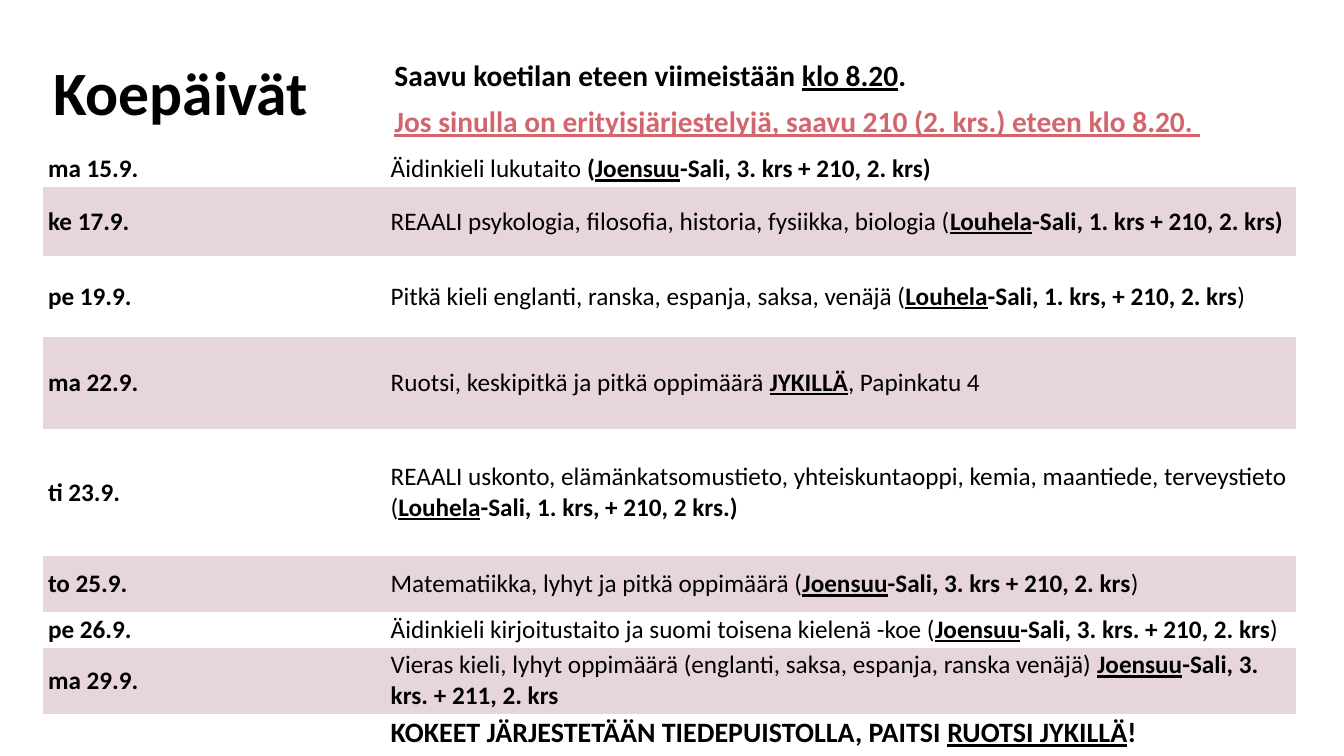
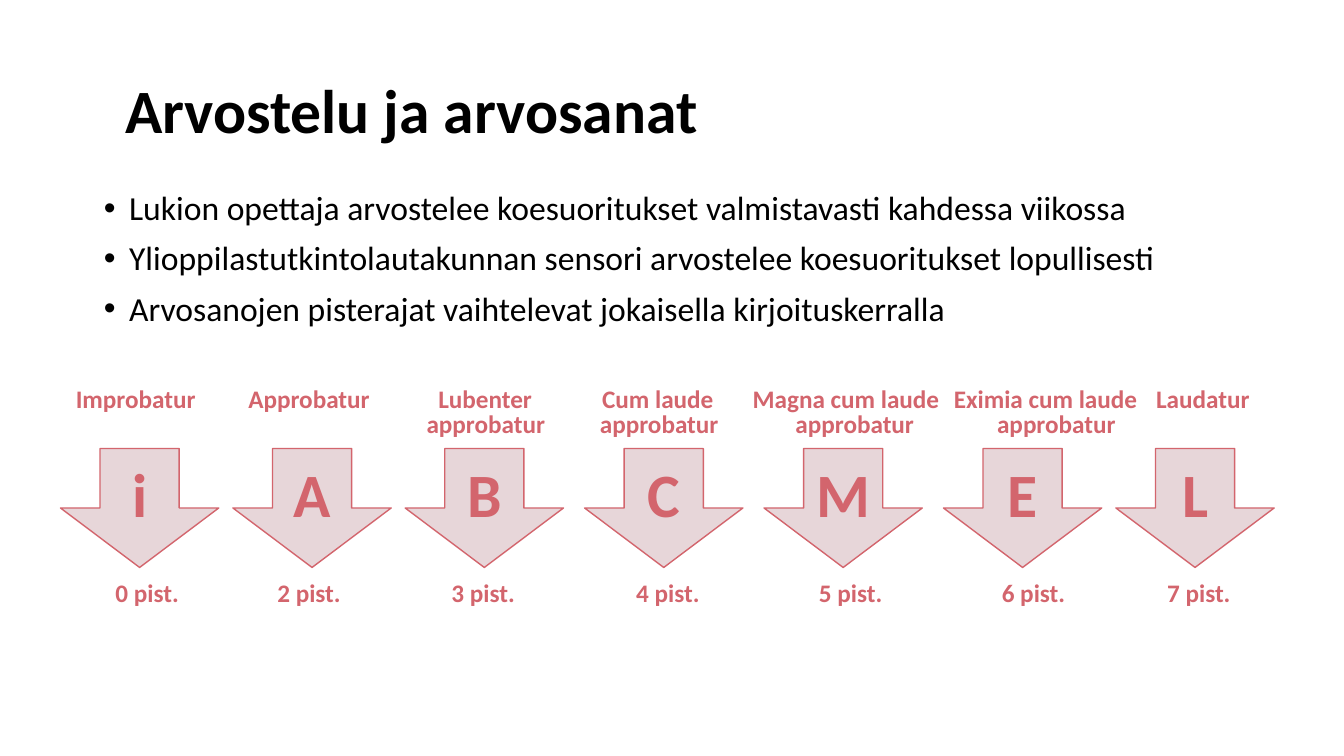
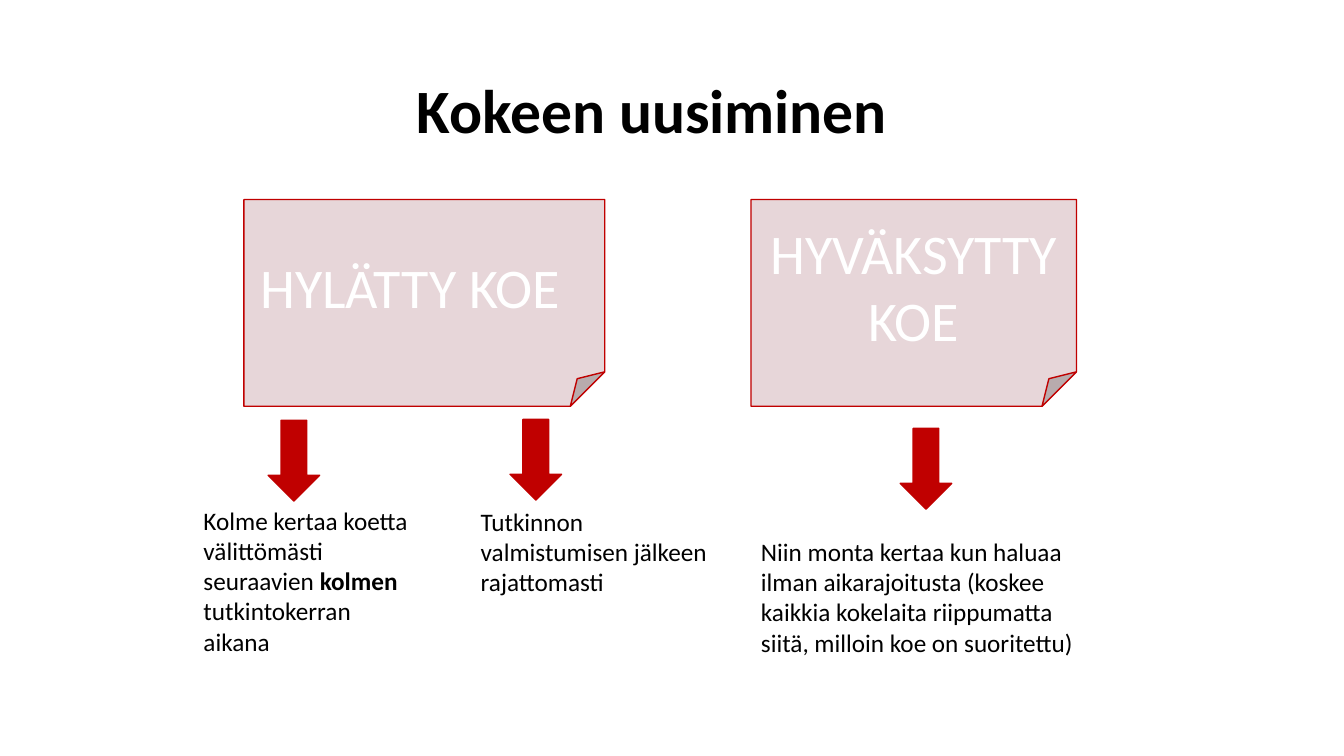
import dataclasses
import typing

import lxml.etree
import pptx
import pptx.dml.color
import pptx.enum.shapes
import pptx.enum.text
import pptx.oxml.ns
import pptx.util

SLIDE_WIDTH = pptx.util.Inches(13.33)
SLIDE_HEIGHT = pptx.util.Inches(7.5)
FONT = "Calibri"
COLORS = {
    "text": "000000",
    "rose": "D3656D",
    "pale": "E7D6D9",
    "red": "C00000",
    "white": "FFFFFF",
}
NO_GRID_STYLE = "{2D5ABB26-0587-4C30-8999-92F81FD0307C}"
ALIGN = pptx.enum.text.PP_ALIGN
ANCHOR = pptx.enum.text.MSO_ANCHOR
SHAPE = pptx.enum.shapes.MSO_SHAPE


class Box(typing.NamedTuple):
    left: float
    top: float
    width: float
    height: float


class Run(typing.NamedTuple):
    text: str
    bold: bool = False
    underline: bool = False
    color: str = "text"


Runs = typing.Sequence[Run]


@dataclasses.dataclass
class ExamDay:
    date: str
    height: float
    runs: Runs
    size: float = 18


@dataclasses.dataclass
class Label:
    text: str
    center: float


@dataclasses.dataclass
class Grade:
    letter: str
    left: float
    name: Label
    points: Label
    second_name: typing.Optional[Label] = None


@dataclasses.dataclass
class Card:
    text: str
    box: Box
    right_inset: float = 0.1


@dataclasses.dataclass
class Outcome:
    arrow_left: float
    arrow_top: float
    text_box: Box
    runs: Runs


def exam(start: str, hall: str, rest: str, end: str = "") -> list[Run]:
    runs = [Run(start), Run(hall, True, True), Run(rest, True)]
    return runs + [Run(end)] if end else runs


EXAM_DAYS = [
    ExamDay("ma 15.9.", 4.8, [
        Run("Äidinkieli lukutaito "), Run("(", True), Run("Joensuu", True, True),
        Run("-Sali, 3. krs + 210, 2. krs)", True)]),
    ExamDay("ke 17.9.", 9.1, exam(
        "REAALI psykologia, filosofia, historia, fysiikka, biologia (",
        "Louhela", "-Sali, 1. krs + 210, 2. krs)")),
    ExamDay("pe 19.9.", 10.7, exam(
        "Pitkä kieli englanti, ranska, espanja, saksa, venäjä (",
        "Louhela", "-Sali, 1. krs, + 210, 2. krs", ")")),
    ExamDay("ma 22.9.", 12.1, [
        Run("Ruotsi, keskipitkä ja pitkä oppimäärä "),
        Run("JYKILLÄ", True, True), Run(", Papinkatu 4")]),
    ExamDay("ti 23.9.", 16.9, exam(
        "REAALI uskonto, elämänkatsomustieto, yhteiskuntaoppi, kemia, maantiede, "
        "terveystieto (", "Louhela", "-Sali, 1. krs, + 210, 2 krs.)")),
    ExamDay("to 25.9.", 7.3, exam(
        "Matematiikka, lyhyt ja pitkä oppimäärä (",
        "Joensuu", "-Sali, 3. krs + 210, 2. krs", ")")),
    ExamDay("pe 26.9.", 4.8, exam(
        "Äidinkieli kirjoitustaito ja suomi toisena kielenä -koe (",
        "Joensuu", "-Sali, 3. krs. + 210, 2. krs", ")")),
    ExamDay("ma 29.9.", 8.7, exam(
        "Vieras kieli, lyhyt oppimäärä (englanti, saksa, espanja, ranska venäjä) ",
        "Joensuu", "-Sali, 3. krs. + 211, 2. krs")),
    ExamDay("", 5.1, [
        Run("KOKEET JÄRJESTETÄÄN TIEDEPUISTOLLA, PAITSI ", True),
        Run("RUOTSI JYKILLÄ", True, True), Run("!", True)], 20),
]

GRADES = [
    Grade("i", 4.5, Label("Improbatur", 10.1), Label("0 pist.", 10.95)),
    Grade("A", 17.33, Label("Approbatur", 23), Label("2 pist.", 23)),
    Grade("B", 30.15, Label("Lubenter", 36.1), Label("3 pist.", 35.95),
          Label("approbatur", 36.15)),
    Grade("C", 43.5, Label("Cum laude", 48.95), Label("4 pist.", 49.7),
          Label("approbatur", 49.05)),
    Grade("M", 56.85, Label("Magna cum laude", 62.95), Label("5 pist.", 63.3),
          Label("approbatur", 63.6)),
    Grade("E", 70.2, Label("Eximia cum laude", 77.8), Label("6 pist.", 76.9),
          Label("approbatur", 78.6)),
    Grade("L", 83.03, Label("Laudatur", 89.5), Label("7 pist.", 89.2)),
]

CARDS = [
    Card("HYLÄTTY KOE", Box(18.15, 26.4, 26.85, 27.35), 0.38),
    Card("HYVÄKSYTTY KOE", Box(55.88, 26.4, 24.22, 27.35)),
]

OUTCOMES = [
    Outcome(19.95, 55.6, Box(14.4, 66.13, 17.4, 21.6), [
        Run("Kolme kertaa koetta välittömästi seuraavien "),
        Run("kolmen", True), Run(" tutkintokerran aikana")]),
    Outcome(37.95, 55.47, Box(35.03, 66.27, 19.8, 13.47), [
        Run("Tutkinnon valmistumisen jälkeen rajattomasti")]),
    Outcome(66.98, 56.67, Box(55.88, 70.27, 25.35, 17.47), [
        Run("Niin monta kertaa kun haluaa ilman aikarajoitusta (koskee kaikkia "
            "kokelaita riippumatta siitä, milloin koe on suoritettu)")]),
]


def across(share: float) -> int:
    return round(SLIDE_WIDTH * share / 100)


def down(share: float) -> int:
    return round(SLIDE_HEIGHT * share / 100)


def lengths(box: Box) -> tuple[int, int, int, int]:
    return across(box.left), down(box.top), across(box.width), down(box.height)


def rgb(name: str) -> pptx.dml.color.RGBColor:
    return pptx.dml.color.RGBColor.from_string(COLORS[name])


def add_runs(paragraph, runs: Runs, size: float) -> None:
    for item in runs:
        run = paragraph.add_run()
        run.text = item.text
        run.font.name = FONT
        run.font.size = pptx.util.Pt(size)
        run.font.bold = item.bold
        run.font.underline = item.underline
        run.font.color.rgb = rgb(item.color)


def place(placeholder, box: Box):
    (placeholder.left, placeholder.top,
     placeholder.width, placeholder.height) = lengths(box)
    frame = placeholder.text_frame
    frame.auto_size = pptx.enum.text.MSO_AUTO_SIZE.NONE
    frame.word_wrap = True
    return frame


def set_title(slide, text: str, box: Box) -> None:
    frame = place(slide.shapes.title, box)
    frame.vertical_anchor = ANCHOR.MIDDLE
    paragraph = frame.paragraphs[0]
    paragraph.alignment = ALIGN.LEFT
    paragraph.line_spacing = 0.9
    add_runs(paragraph, [Run(text, True)], 44)


def set_body(slide, lines: typing.Sequence[Runs], box: Box, size: float,
             bullet: str = "") -> None:
    frame = place(slide.placeholders[1], box)
    frame.vertical_anchor = ANCHOR.TOP
    for index, runs in enumerate(lines):
        paragraph = frame.add_paragraph() if index else frame.paragraphs[0]
        properties = paragraph._p.get_or_add_pPr()
        indent = pptx.util.Inches(0.25) if bullet else 0
        properties.set("marL", str(indent))
        properties.set("indent", str(-indent))
        tag = "a:buChar" if bullet else "a:buNone"
        mark = lxml.etree.SubElement(properties, pptx.oxml.ns.qn(tag))
        if bullet:
            mark.set("char", bullet)
        paragraph.alignment = ALIGN.LEFT
        paragraph.line_spacing = 0.9
        paragraph.space_before = pptx.util.Pt(10 if index else 0)
        add_runs(paragraph, runs, size)


def add_text(slide, box: Box, runs: Runs, alignment=ALIGN.LEFT) -> None:
    frame = slide.shapes.add_textbox(*lengths(box)).text_frame
    frame.word_wrap = True
    frame.paragraphs[0].alignment = alignment
    add_runs(frame.paragraphs[0], runs, 18)


def add_shape(slide, kind, box: Box, fill: str, line: str):
    shape = slide.shapes.add_shape(kind, *lengths(box))
    shape.shadow.inherit = False
    shape.fill.solid()
    shape.fill.fore_color.rgb = rgb(fill)
    shape.line.color.rgb = rgb(line)
    shape.line.width = pptx.util.Pt(1)
    return shape


def add_shape_text(shape, run: Run, size: float):
    frame = shape.text_frame
    frame.word_wrap = True
    frame.vertical_anchor = ANCHOR.MIDDLE
    frame.paragraphs[0].alignment = ALIGN.CENTER
    add_runs(frame.paragraphs[0], [run], size)
    return frame


def fill_cell(cell, runs: Runs, size: float, shaded: bool) -> None:
    cell.vertical_anchor = ANCHOR.MIDDLE
    cell.margin_left = cell.margin_right = pptx.util.Inches(0.05)
    cell.margin_top = cell.margin_bottom = pptx.util.Inches(0.02)
    if shaded:
        cell.fill.solid()
        cell.fill.fore_color.rgb = rgb("pale")
    else:
        cell.fill.background()
    add_runs(cell.text_frame.paragraphs[0], runs, size)


def add_exam_table(slide) -> None:
    widths = (25.5, 67.75)
    box = Box(3.2, 20, sum(widths), sum(day.height for day in EXAM_DAYS))
    table = slide.shapes.add_table(
        len(EXAM_DAYS), len(widths), *lengths(box)).table
    table.first_row = table.horz_banding = False
    style = table._tbl.tblPr.find(pptx.oxml.ns.qn("a:tableStyleId"))
    style.text = NO_GRID_STYLE
    for column, width in zip(table.columns, widths):
        column.width = across(width)
    for index, day in enumerate(EXAM_DAYS):
        table.rows[index].height = down(day.height)
        shaded = index % 2 == 1
        date_runs = [Run(day.date, True)] if day.date else []
        fill_cell(table.cell(index, 0), date_runs, day.size, shaded)
        fill_cell(table.cell(index, 1), day.runs, day.size, shaded)


def add_label(slide, label: Label, top: float) -> None:
    width = 17
    add_text(slide, Box(label.center - width / 2, top, width, 5.33),
             [Run(label.text, True, color="rose")], ALIGN.CENTER)


def add_grade(slide, grade: Grade) -> None:
    arrow = add_shape(slide, SHAPE.DOWN_ARROW,
                      Box(grade.left, 59.33, 11.78, 15.73), "pale", "rose")
    add_shape_text(arrow, Run(grade.letter, True, color="rose"), 44)
    add_label(slide, grade.name, 50)
    if grade.second_name:
        add_label(slide, grade.second_name, 53.33)
    add_label(slide, grade.points, 75.73)


def build_exam_days(presentation) -> None:
    slide = presentation.slides.add_slide(presentation.slide_layouts[1])
    set_title(slide, "Koepäivät", Box(3.2, 5.3, 89.9, 14.8))
    arrival = [
        [Run("Saavu koetilan eteen viimeistään ", True),
         Run("klo 8.20", True, True), Run(".", True)],
        [Run("Jos sinulla on erityisjärjestelyjä, saavu 210 (2. krs.) eteen klo 8.20. ",
             True, True, "rose")],
    ]
    set_body(slide, arrival, Box(28.6, 7.45, 70.5, 19.35), 21)
    add_exam_table(slide)


def build_grades(presentation) -> None:
    slide = presentation.slides.add_slide(presentation.slide_layouts[1])
    set_title(slide, "Arvostelu ja arvosanat", Box(8.55, 5.3, 84.6, 19.35))
    facts = [
        "Lukion opettaja arvostelee koesuoritukset valmistavasti kahdessa viikossa",
        "Ylioppilastutkintolautakunnan sensori arvostelee koesuoritukset lopullisesti",
        "Arvosanojen pisterajat vaihtelevat jokaisella kirjoituskerralla",
    ]
    set_body(slide, [[Run(fact)] for fact in facts],
             Box(6.98, 24.67, 86.25, 63.47), 24, "•")
    for grade in GRADES:
        add_grade(slide, grade)


def build_retakes(presentation) -> None:
    slide = presentation.slides.add_slide(presentation.slide_layouts[5])
    set_title(slide, "Kokeen uusiminen", Box(30.23, 5.3, 54.45, 19.35))
    for card in CARDS:
        shape = add_shape(slide, SHAPE.FOLDED_CORNER, card.box, "pale", "red")
        frame = add_shape_text(shape, Run(card.text, color="white"), 40)
        frame.margin_right = pptx.util.Inches(card.right_inset)
    for outcome in OUTCOMES:
        add_shape(slide, SHAPE.DOWN_ARROW,
                  Box(outcome.arrow_left, outcome.arrow_top, 3.83, 10.67),
                  "red", "red")
        add_text(slide, outcome.text_box, outcome.runs)


def main() -> None:
    presentation = pptx.Presentation()
    presentation.slide_width = SLIDE_WIDTH
    presentation.slide_height = SLIDE_HEIGHT
    build_exam_days(presentation)
    build_grades(presentation)
    build_retakes(presentation)
    presentation.save("out.pptx")


if __name__ == "__main__":
    main()
